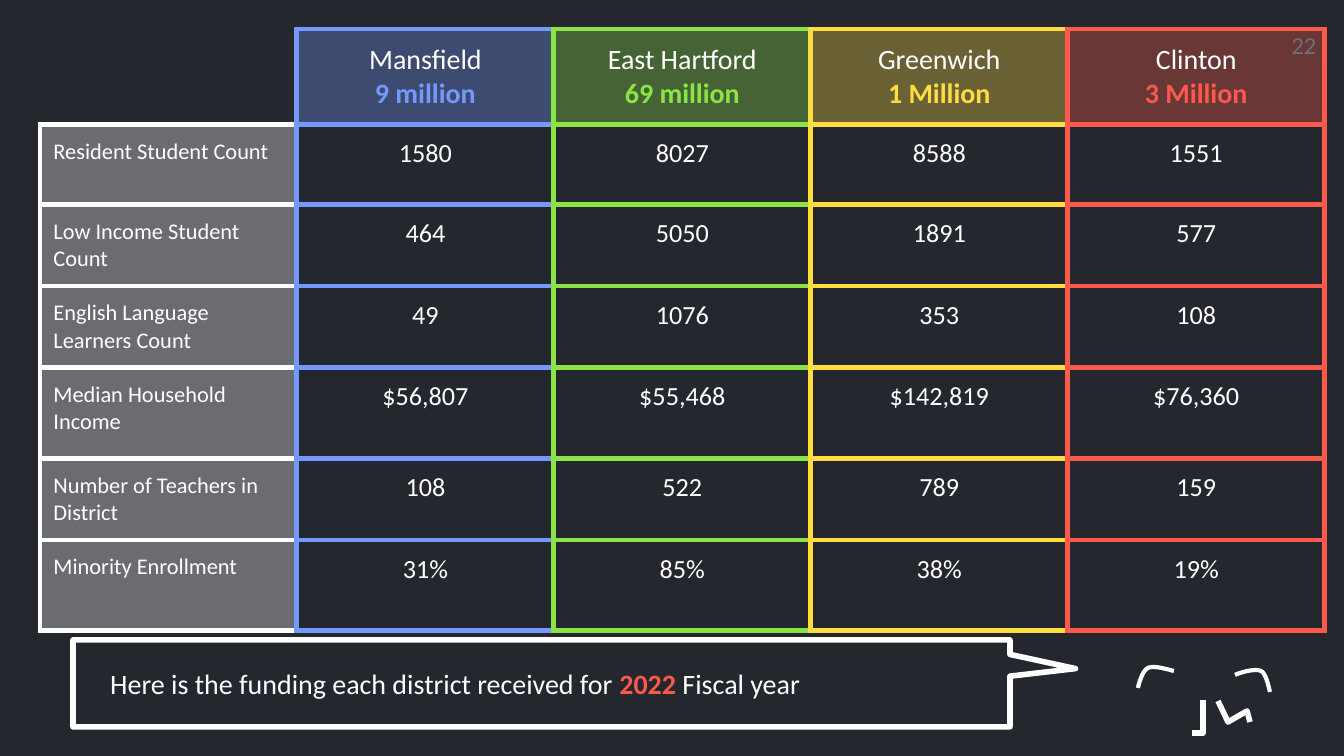
"""Build a slide comparing four school districts in a coloured table."""
from lxml import etree
from pptx import Presentation
from pptx import util as u
from pptx.dml.color import RGBColor
from pptx.enum import shapes, text
from pptx.oxml.ns import qn

SCALE = 914400 / 134.4
FONT = "Calibri"
BACKGROUND, WHITE, GRAY = "24272E", "FFFFFF", "6B707C"
BLUE, GREEN, YELLOW, RED = "7598FF", "8CE444", "FFDD41", "FF594C"

DISTRICTS = [
    ("Mansfield", "9 million", BLUE),
    ("East Hartford", "69 million", GREEN),
    ("Greenwich", "1 Million", YELLOW),
    ("Clinton", "3 Million", RED),
]
MEASURES = [
    ("Resident Student Count", "1580", "8027", "8588", "1551"),
    ("Low Income Student Count", "464", "5050", "1891", "577"),
    ("English Language Learners Count", "49", "1076", "353", "108"),
    ("Median Household Income", "$56,807", "$55,468", "$142,819", "$76,360"),
    ("Number of Teachers in District", "108", "522", "789", "159"),
    ("Minority Enrollment", "31%", "85%", "38%", "19%"),
]
ROW_HEIGHTS = [95, 80, 81, 81, 91, 81, 91]
COLUMN_WIDTH = 257
TABLE_LEFT, TABLE_TOP = 40, 29
CAPTION = [
    ("Here is the funding each district received for ", WHITE, False),
    ("2022 ", RED, True),
    ("Fiscal year", WHITE, False),
]
CALLOUT = (73, 640, 937, 87)
CALLOUT_TIP = (0.57, -0.17, 0)
FACE_LINES = [
    ([(1218, 701), (1228, 722), (1247, 711), (1250, 722)], 3),
    ([(1203, 700), (1203, 733), (1192, 733)], 3),
]
EYEBROWS = [
    [(1235, 675), (1239, 673), (1255, 668), (1261, 671), (1266, 673), (1269, 688), (1270, 692)],
    [(1174, 671), (1169, 670), (1154, 665), (1148, 668), (1142, 671), (1139, 684), (1138, 688)],
]


def px(length):
    return u.Emu(round(length * SCALE))


def rgb(color):
    return RGBColor.from_string(color)


def style(paragraph, size, color=WHITE, bold=False, align=text.PP_ALIGN.LEFT):
    paragraph.alignment = align
    font = paragraph.font
    font.name, font.size, font.bold = FONT, u.Pt(size), bold
    font.color.rgb = rgb(color)


def set_margins(holder, margin):
    holder.margin_left = holder.margin_right = u.Inches(margin)
    holder.margin_top = holder.margin_bottom = u.Inches(margin)


def set_borders(cell, left, right, top, bottom):
    properties = cell._tc.get_or_add_tcPr()
    sides = zip(("a:lnL", "a:lnR", "a:lnT", "a:lnB"), (left, right, top, bottom))
    for position, (tag, color) in enumerate(sides):
        line = etree.Element(qn(tag), w=str(u.Pt(3)))
        if color:
            fill = etree.SubElement(line, qn("a:solidFill"))
            etree.SubElement(fill, qn("a:srgbClr"), val=color)
        else:
            etree.SubElement(line, qn("a:noFill"))
        properties.insert(position, line)


def fill_cell(cell, color):
    if color is None:
        cell.fill.background()
        return
    cell.fill.solid()
    cell.fill.fore_color.rgb = rgb(color)
    swatch = cell._tc.tcPr.find(".//" + qn("a:srgbClr"))
    etree.SubElement(swatch, qn("a:alpha"), val="32000")


def write_cell(cell, lines, align):
    set_margins(cell, 0.1)
    cell.text = "\n".join(line[0] for line in lines)
    for paragraph, (_, size, color, bold) in zip(cell.text_frame.paragraphs, lines):
        style(paragraph, size, color, bold, align)


def add_district_table(slide):
    colors = [WHITE] + [district[2] for district in DISTRICTS]
    right_colors = colors[1:] + colors[-1:]
    rows, columns = len(ROW_HEIGHTS), len(colors)
    table = slide.shapes.add_table(rows, columns, px(TABLE_LEFT), px(TABLE_TOP),
                                   px(COLUMN_WIDTH * columns), px(sum(ROW_HEIGHTS))).table
    table.first_row = table.horz_banding = False
    for row, height in zip(table.rows, ROW_HEIGHTS):
        row.height = px(height)
    for column, (color, right) in enumerate(zip(colors, right_colors)):
        table.columns[column].width = px(COLUMN_WIDTH)
        for row in range(rows):
            cell = table.cell(row, column)
            corner = row == 0 and column == 0
            shaded = (row == 0) != (column == 0)
            fill_cell(cell, color if shaded else None)
            outer = None if corner else color
            set_borders(cell, outer, right, outer, color)
            if corner:
                continue
            if row == 0:
                name, funding, _ = DISTRICTS[column - 1]
                lines = [(name, 15, WHITE, False), (funding, 15, color, True)]
            else:
                lines = [(MEASURES[row - 1][column], 14 if column else 12, WHITE, False)]
            write_cell(cell, lines, text.PP_ALIGN.CENTER if column else text.PP_ALIGN.LEFT)


def add_text(slide, box, runs, size, margin, align):
    frame = slide.shapes.add_textbox(*map(px, box)).text_frame
    frame.word_wrap = True
    set_margins(frame, margin)
    paragraph = frame.paragraphs[0]
    style(paragraph, size, runs[0][1], False, align)
    for words, color, bold in runs:
        run = paragraph.add_run()
        run.text = words
        if len(runs) > 1:
            run.font.bold = bold
            run.font.color.rgb = rgb(color)


def outline(shape, width):
    shape.shadow.inherit = False
    shape.fill.background()
    shape.line.color.rgb = rgb(WHITE)
    shape.line.width = u.Pt(width)


def curve(points, steps=8):
    result = [points[0]]
    for start in range(0, len(points) - 1, 3):
        controls = points[start:start + 4]
        for step in range(1, steps + 1):
            t = step / steps
            weights = ((1 - t) ** 3, 3 * t * (1 - t) ** 2, 3 * t * t * (1 - t), t ** 3)
            result.append(tuple(sum(w * p[axis] for w, p in zip(weights, controls))
                                for axis in (0, 1)))
    return result


def add_stroke(slide, points, width):
    points = [(px(x), px(y)) for x, y in points]
    builder = slide.shapes.build_freeform(*points[0])
    builder.add_line_segments(points[1:], close=False)
    outline(builder.convert_to_shape(), width)


def main():
    presentation = Presentation()
    presentation.slide_width, presentation.slide_height = px(1344), px(756)
    slide = presentation.slides.add_slide(presentation.slide_layouts[6])
    slide.background.fill.solid()
    slide.background.fill.fore_color.rgb = rgb(BACKGROUND)

    add_district_table(slide)
    add_text(slide, (1235, 30, 81, 58), [("22", GRAY, False)], 13, 0, text.PP_ALIGN.RIGHT)
    add_text(slide, (97, 653, 891, 129), CAPTION, 15, 0.1, text.PP_ALIGN.LEFT)
    for points, width in FACE_LINES + [(curve(brow), 2.25) for brow in EYEBROWS]:
        add_stroke(slide, points, width)

    callout = slide.shapes.add_shape(shapes.MSO_SHAPE.ROUNDED_RECTANGULAR_CALLOUT,
                                     *map(px, CALLOUT))
    for index, value in enumerate(CALLOUT_TIP):
        callout.adjustments[index] = value
    outline(callout, 3)
    presentation.save("out.pptx")


if __name__ == "__main__":
    main()
